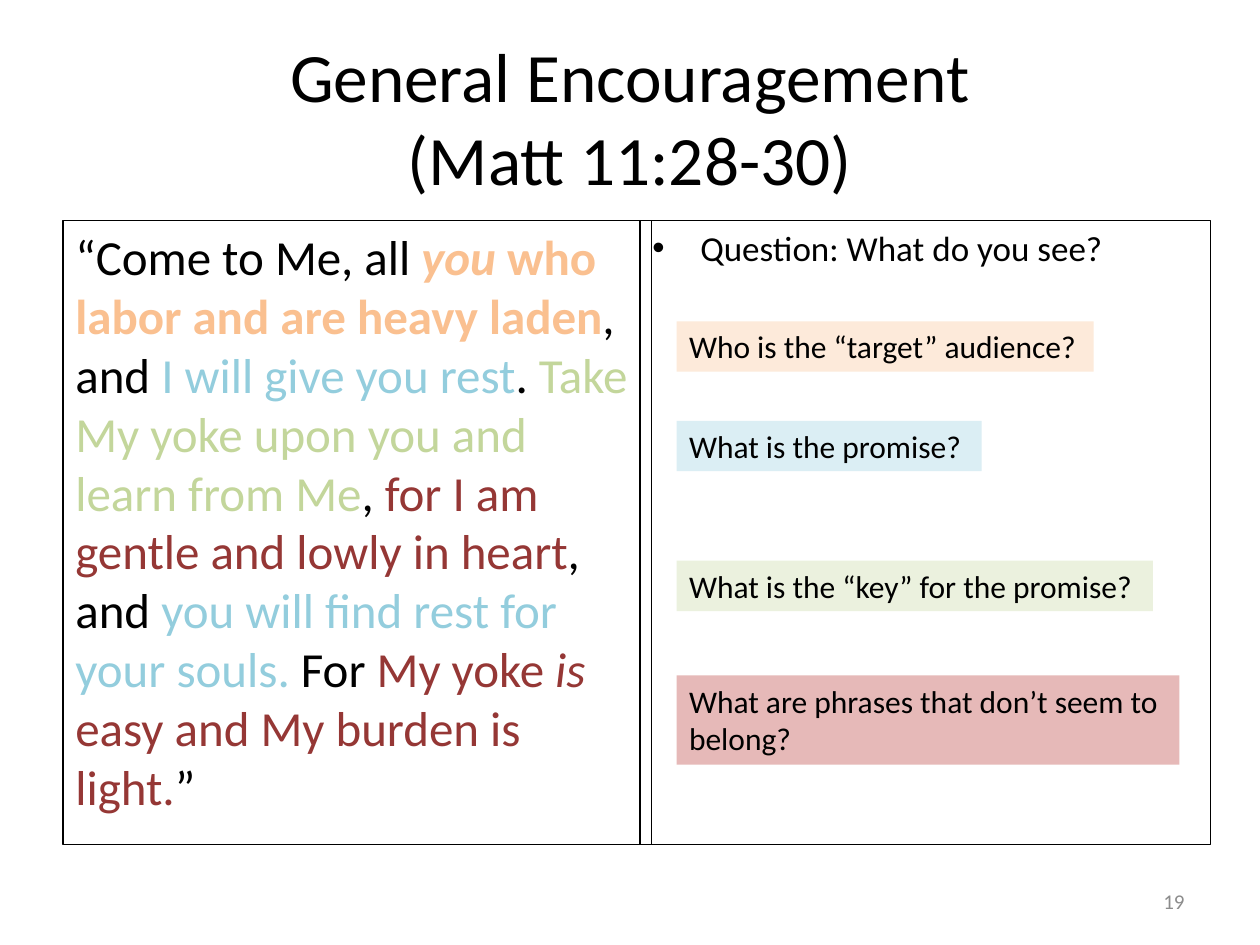
from dataclasses import dataclass

from lxml import etree
from pptx import Presentation
from pptx.dml.color import RGBColor
from pptx.enum.shapes import MSO_SHAPE as SHAPE
from pptx.enum.text import MSO_ANCHOR as ANCHOR, MSO_AUTO_SIZE as AUTO, PP_ALIGN as ALIGN
from pptx.oxml.ns import qn
from pptx.util import Inches, Pt


@dataclass(frozen=True)
class Theme:
    font: str = "Calibri"
    text: str = "000000"
    muted: str = "8C8C8C"
    # Verse highlights
    audience: str = "FAC090"
    promise: str = "93CDDD"
    key: str = "C3D69B"
    extra: str = "953735"
    # Label fills, tints of the highlights
    audience_fill: str = "FDEADA"
    promise_fill: str = "DBEEF4"
    key_fill: str = "EBF1DE"
    extra_fill: str = "E6B9B8"
    # Type sizes
    title: float = 39.6
    verse: float = 28
    question: float = 20
    label: float = 18
    number: float = 12


def add_text(p, text, *, font, size, color, bold=False, italic=False):
    r = p.add_run()
    r.text = text
    r.font.name, r.font.size = font, Pt(size)
    r.font.color.rgb = RGBColor.from_string(color)
    r.font.bold, r.font.italic = bold, italic


class SlideBuilder:
    def __init__(self, s, theme):
        self.s, self.theme = s, theme

    def run(self, p, text, size, color=None, **style):
        add_text(p, text, font=self.theme.font, size=size,
                 color=color or self.theme.text, **style)

    def text_box(self, box, lines, size, align, color=None):
        tf = self.s.shapes.add_textbox(*map(Inches, box)).text_frame
        tf.word_wrap, tf.vertical_anchor = True, ANCHOR.MIDDLE
        p = tf.paragraphs[0]
        p.alignment = align
        for i, line in enumerate(lines):
            if i:
                p.add_line_break()
            self.run(p, line, size, color)

    def rectangle(self, box, fill=None, line=None):
        sp = self.s.shapes.add_shape(SHAPE.RECTANGLE, *map(Inches, box))
        sp.shadow.inherit = False
        if fill:
            sp.fill.solid()
            sp.fill.fore_color.rgb = RGBColor.from_string(fill)
        else:
            sp.fill.background()
        if line:
            sp.line.color.rgb = RGBColor.from_string(line)
            sp.line.width = Pt(0.75)
        else:
            sp.line.fill.background()
        tf = sp.text_frame
        tf.word_wrap, tf.vertical_anchor = True, ANCHOR.TOP
        tf.paragraphs[0].alignment = ALIGN.LEFT
        return tf

    def panel(self, box, runs, size, bullet=False):
        p = self.rectangle(box, line=self.theme.text).paragraphs[0]
        p.space_before = Pt(size * 0.2)
        if bullet:
            pPr = p._p.get_or_add_pPr()
            indent = Inches(0.38)
            pPr.set("marL", str(indent))
            pPr.set("indent", str(-indent))
            etree.SubElement(pPr, qn("a:buFont")).set("typeface", "Arial")
            etree.SubElement(pPr, qn("a:buChar")).set("char", "•")
        for text, color, style in runs:
            self.run(p, text, size, color, **style)

    def label(self, box, text, fill, wrap=True):
        tf = self.rectangle(box, fill=fill)
        tf.word_wrap, tf.auto_size = wrap, AUTO.SHAPE_TO_FIT_TEXT
        self.run(tf.paragraphs[0], text, self.theme.label)


def main():
    prs = Presentation()
    prs.slide_width, prs.slide_height = Inches(10), Inches(7.5)
    t = Theme()
    slide = SlideBuilder(prs.slides.add_slide(prs.slide_layouts[6]), t)

    # Title
    slide.text_box((0.5, 0.3, 9, 1.25), ["General Encouragement", "(Matt 11:28-30)"],
                   t.title, ALIGN.CENTER)

    # Verse, coloured by theme; non-breaking spaces hold phrases together
    verse = [
        ("“Come to Me, all ", t.text, {}),
        ("you", t.audience, {"bold": True, "italic": True}),
        (" who labor and are heavy laden", t.audience, {"bold": True}),
        (", and ", t.text, {}),
        ("I will give you rest", t.promise, {}),
        (". ", t.text, {}),
        ("Take My yoke upon you and learn from Me", t.key, {}),
        (", ", t.text, {}),
        ("for I am gentle and lowly in heart", t.extra, {}),
        (", and ", t.text, {}),
        ("you will find rest for your souls. ", t.promise, {}),
        ("For ", t.text, {}),
        ("My yoke ", t.extra, {}),
        ("is", t.extra, {"italic": True}),
        (" easy and My burden is light.", t.extra, {}),
        ("”", t.text, {}),
    ]
    slide.panel((0.5, 1.75, 4.67, 4.95), verse, t.verse)

    # Question panel
    slide.panel((5.08, 1.75, 4.53, 4.95),
                [("Question: What do you see?", t.text, {})], t.question, bullet=True)

    # Page number
    slide.text_box((7.17, 6.95, 2.33, 0.4), ["19"], t.number, ALIGN.RIGHT, t.muted)

    # Question labels: top, width, height, text, fill, wrap
    labels = [
        (5.36, 3.99, 0.71, "What are phrases that don’t seem to belong?", t.extra_fill, True),
        (2.55, 3.31, 0.4, "Who is the “target” audience?", t.audience_fill, False),
        (3.34, 2.42, 0.4, "What is the promise?", t.promise_fill, True),
        (4.45, 3.78, 0.4, "What is the “key” for the promise?", t.key_fill, True),
    ]
    for top, width, height, text, fill, wrap in labels:
        slide.label((5.37, top, width, height), text, fill, wrap)

    prs.save("out.pptx")


if __name__ == "__main__":
    main()
